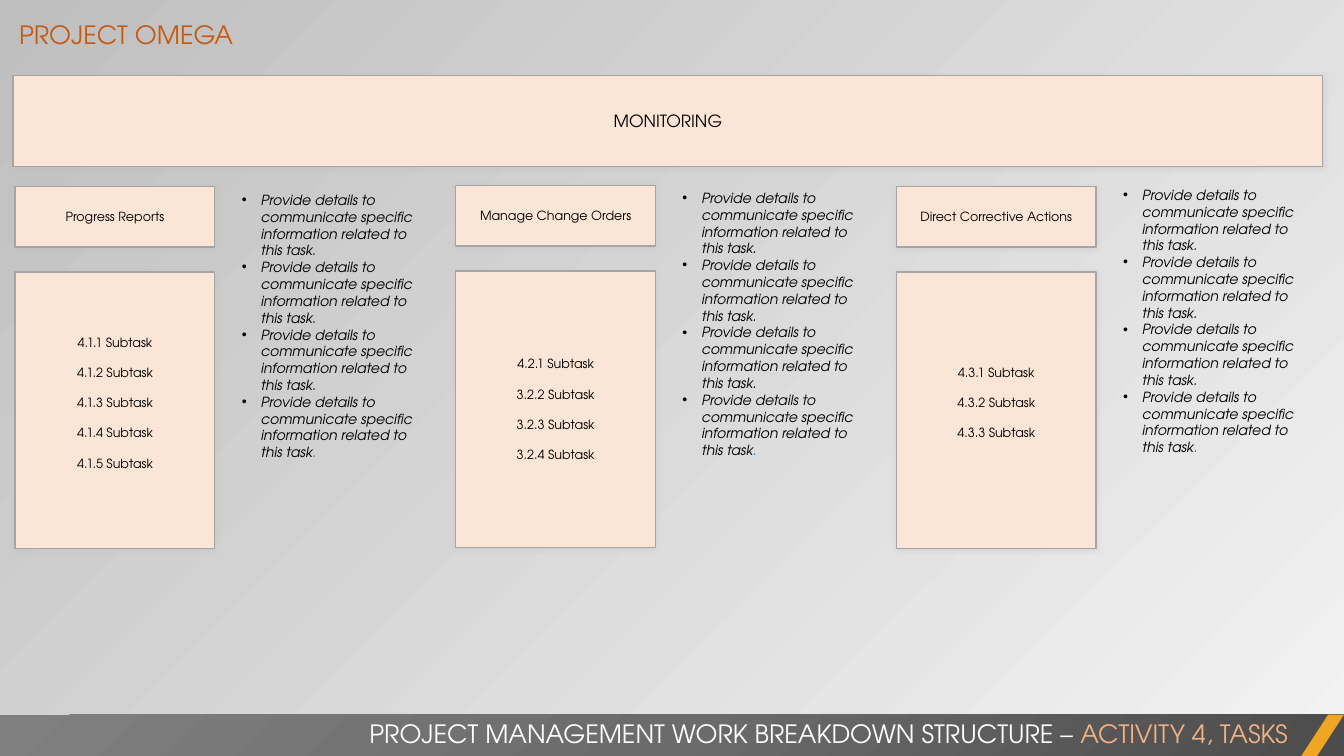
from pptx import Presentation
from pptx.dml.color import RGBColor
from pptx.enum.shapes import MSO_SHAPE
from pptx.enum.text import MSO_ANCHOR, MSO_AUTO_SIZE, PP_ALIGN
from pptx.oxml import parse_xml
from pptx.oxml.ns import nsdecls, qn
from pptx.util import Inches, Pt

FONT = "TeX Gyre Adventor"
COLORS = {
    "light": "F2F2F2", "gray": "BFBFBF", "box": "FBE5D6", "border": "A5A5A5",
    "text": "000000", "white": "FFFFFF", "activity": "F4B183", "project": "C55A11",
    "stop": "2E75B6", "accent": "F0A622",
    "bar_dark": "4C4C4C", "bar_middle": "6B6B6B", "bar_light": "808080",
}
SLIDE_WIDTH, SLIDE_HEIGHT = 13.33, 7.5
MARGIN, COLUMN_PITCH, BOX_WIDTH = 0.15, 4.37, 1.98
DETAIL_OFFSET, DETAIL_WIDTH = 2.15, 2.06
HEADER_HEIGHT, SUBTASK_OFFSET, SUBTASK_HEIGHT = 0.6, 0.85, 2.74
BAR_TOP, BAR_HEIGHT = 7.09, 0.42
DETAIL = "Provide details to communicate specific information related to this task"
TASKS = [
    {"name": "Progress Reports", "top": 1.85, "detail_top": 1.85, "bottom_inset": 0.2,
     "subtasks": ["4.1.1", "4.1.2", "4.1.3", "4.1.4", "4.1.5"]},
    {"name": "Manage Change Orders", "top": 1.84, "detail_top": 1.83, "bottom_inset": 0.05,
     "subtasks": ["4.2.1", "3.2.2", "3.2.3", "3.2.4"]},
    {"name": "Direct Corrective Actions", "top": 1.85, "detail_top": 1.8, "bottom_inset": 0.2,
     "subtasks": ["4.3.1", "4.3.2", "4.3.3"]},
]


def color(name):
    return RGBColor.from_string(COLORS[name])


def apply(target, values):
    for name, value in values.items():
        setattr(target, name, value)


def write(frame, paragraphs, size, paragraph_format, italic=False):
    for index, runs in enumerate(paragraphs):
        paragraph = frame.paragraphs[0] if index == 0 else frame.add_paragraph()
        apply(paragraph, paragraph_format)
        for text, color_name in runs:
            run = paragraph.add_run()
            run.text = text
            apply(run.font, {"name": FONT, "size": Pt(size), "italic": italic})
            run.font.color.rgb = color(color_name)


def add_plain_shape(slide, kind, bounds, fill):
    shape = slide.shapes.add_shape(kind, *map(Inches, bounds))
    shape.shadow.inherit = False
    shape.fill.solid()
    shape.fill.fore_color.rgb = color(fill)
    shape.line.fill.background()
    return shape


def add_box(slide, bounds, lines, size, bottom_inset=0.05):
    shape = add_plain_shape(slide, MSO_SHAPE.RECTANGLE, bounds, "box")
    shape.line.color.rgb = color("border")
    shape.line.width = Pt(1)
    shape.element.spPr.find(qn("a:effectLst")).append(parse_xml(
        f'<a:outerShdw {nsdecls("a")} blurRad="{Pt(4)}" dist="{Pt(1)}" dir="5400000" '
        f'algn="t" rotWithShape="0"><a:srgbClr val="{COLORS["gray"]}">'
        '<a:alpha val="40000"/></a:srgbClr></a:outerShdw>'))
    apply(shape.text_frame, {"word_wrap": True, "vertical_anchor": MSO_ANCHOR.MIDDLE,
                             "margin_bottom": Inches(bottom_inset)})
    write(shape.text_frame, [[(line, "text")] for line in lines], size,
          {"alignment": PP_ALIGN.CENTER, "space_after": Pt(10.8)})


def add_text(slide, bounds, paragraphs, size, alignment=PP_ALIGN.LEFT, italic=False):
    frame = slide.shapes.add_textbox(*map(Inches, bounds)).text_frame
    apply(frame, {"word_wrap": True, "auto_size": MSO_AUTO_SIZE.SHAPE_TO_FIT_TEXT})
    write(frame, paragraphs, size, {"alignment": alignment}, italic)
    return frame


def add_details(slide, left, top):
    paragraphs = [[(DETAIL + ".", "text")]] * 3 + [[(DETAIL, "text"), (".", "stop")]]
    frame = add_text(slide, (left, top, DETAIL_WIDTH, 3), paragraphs, 10, italic=True)
    for paragraph in frame.paragraphs:
        properties = paragraph._p.get_or_add_pPr()
        properties.set("marL", str(Inches(0.19)))
        properties.set("indent", str(-Inches(0.19)))
        properties.append(parse_xml(f'<a:buFont {nsdecls("a")} typeface="Arial"/>'))
        properties.append(parse_xml(f'<a:buChar {nsdecls("a")} char="•"/>'))


def add_task(slide, column, task):
    left, top = MARGIN + column * COLUMN_PITCH, task["top"]
    add_box(slide, (left, top, BOX_WIDTH, HEADER_HEIGHT), [task["name"]], 9)
    add_box(slide, (left, top + SUBTASK_OFFSET, BOX_WIDTH, SUBTASK_HEIGHT),
            [f"{number} Subtask" for number in task["subtasks"]], 9, task["bottom_inset"])
    add_details(slide, left + DETAIL_OFFSET, task["detail_top"])


def add_footer(slide):
    bar = add_plain_shape(slide, MSO_SHAPE.RECTANGLE,
                          (0, BAR_TOP, SLIDE_WIDTH, BAR_HEIGHT), "bar_middle")
    stops = "".join(
        f'<a:gs pos="{position * 1000}"><a:srgbClr val="{COLORS[name]}"/></a:gs>'
        for position, name in [(0, "bar_dark"), (50, "bar_middle"), (100, "bar_light")])
    properties = bar.element.spPr
    properties.replace(properties.find(qn("a:solidFill")), parse_xml(
        f'<a:gradFill {nsdecls("a")} rotWithShape="1"><a:gsLst>{stops}</a:gsLst>'
        '<a:path path="circle"><a:fillToRect l="100000" t="100000"/></a:path></a:gradFill>'))
    accent = add_plain_shape(slide, MSO_SHAPE.PARALLELOGRAM,
                             (SLIDE_WIDTH - 0.43, BAR_TOP, 0.43, BAR_HEIGHT), "accent")
    accent.adjustments[0] = 0.65
    add_text(slide, (0, 7.08, 12.87, 0.4),
             [[("PROJECT MANAGEMENT WORK BREAKDOWN STRUCTURE – ", "white"),
               ("ACTIVITY 4, TASKS", "activity")]], 18, PP_ALIGN.RIGHT)


def paint_background(slide):
    fill = slide.background.fill
    fill.gradient()
    fill.gradient_angle = 135
    for stop, name, position in zip(fill.gradient_stops, ("light", "gray"), (0, 1)):
        stop.color.rgb = color(name)
        stop.position = position


def main():
    presentation = Presentation()
    apply(presentation, {"slide_width": Inches(SLIDE_WIDTH),
                         "slide_height": Inches(SLIDE_HEIGHT)})
    slide = presentation.slides.add_slide(presentation.slide_layouts[6])
    paint_background(slide)
    add_text(slide, (0.09, 0.14, 10.11, 0.4), [[("PROJECT OMEGA", "project")]], 18)
    add_box(slide, (0.13, 0.75, 12.99, 0.9), ["MONITORING"], 12)
    for column, task in enumerate(TASKS):
        add_task(slide, column, task)
    add_footer(slide)
    presentation.save("out.pptx")


if __name__ == "__main__":
    main()
